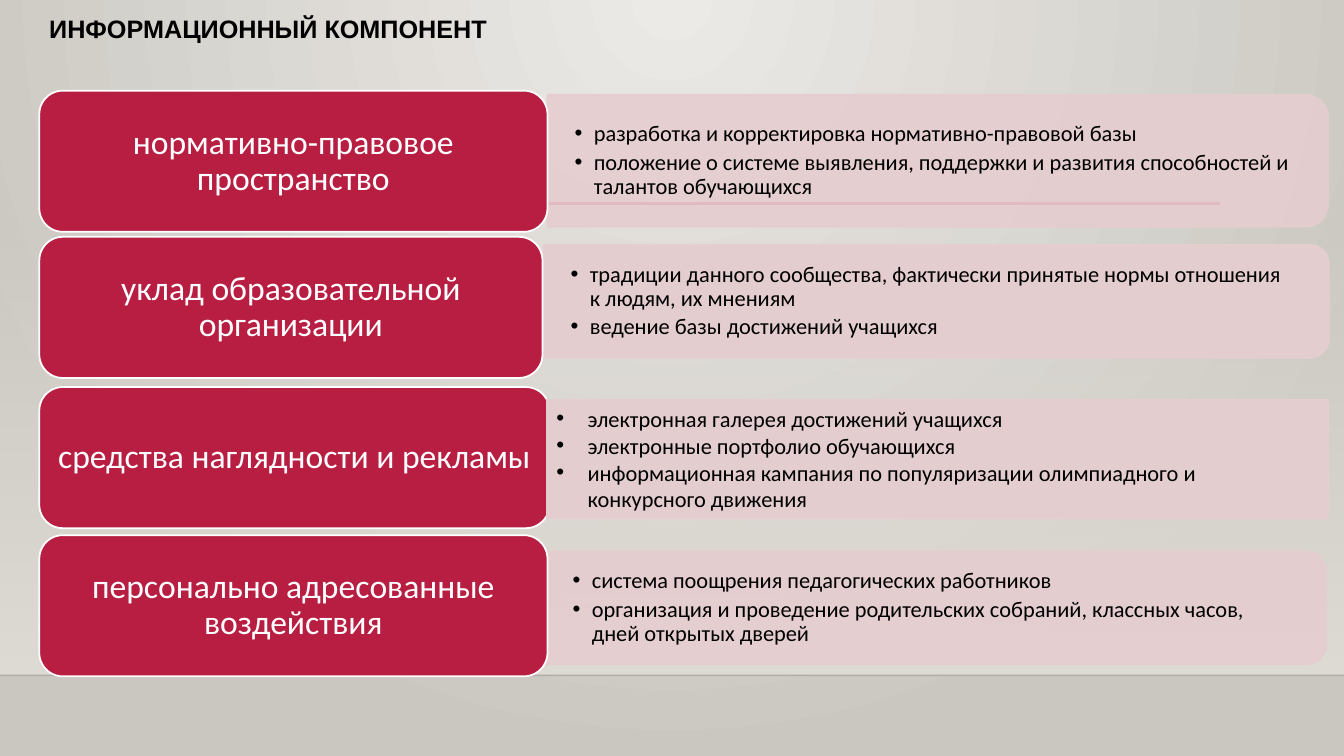
from dataclasses import dataclass
from typing import Any

from lxml import etree
from pptx import Presentation
from pptx.dml.color import RGBColor
from pptx.enum.shapes import MSO_CONNECTOR, MSO_SHAPE
from pptx.enum.text import MSO_ANCHOR, PP_ALIGN
from pptx.oxml.ns import qn
from pptx.util import Inches, Pt

RECTANGLE = MSO_SHAPE.RECTANGLE
ROUNDED = MSO_SHAPE.ROUNDED_RECTANGLE
ROUNDED_TOP = MSO_SHAPE.ROUND_2_SAME_RECTANGLE
STRAIGHT = MSO_CONNECTOR.STRAIGHT
MIDDLE = MSO_ANCHOR.MIDDLE
TOP = MSO_ANCHOR.TOP
LEFT = PP_ALIGN.LEFT
CENTER = PP_ALIGN.CENTER

BLACK = RGBColor(0x00, 0x00, 0x00)
WHITE = RGBColor(0xFF, 0xFF, 0xFF)
CRIMSON = RGBColor(0xB7, 0x1E, 0x42)
PINK = RGBColor(0xE6, 0xCD, 0xCF)
SOLID_PINK = RGBColor(0xE4, 0xCD, 0xCF)
LIGHT_GREY = RGBColor(0xEC, 0xEA, 0xE7)
DARK_GREY = RGBColor(0xCA, 0xC7, 0xC1)
WALL_GREY = RGBColor(0xDF, 0xDB, 0xD5)

SLIDE_WIDTH = 13.33
FLOOR = 6.7
LABEL_LEFT = 0.39
LABEL_HEIGHT = 1.4


@dataclass(frozen=True)
class Area:
    left: float
    top: float
    width: float
    height: float

    def lengths(self) -> list[int]:
        return [Inches(v) for v in (self.left, self.top, self.width, self.height)]


@dataclass(frozen=True)
class TextStyle:
    size: int
    color: RGBColor
    name: str = "Calibri"
    bold: bool = False
    align: Any = LEFT
    line_spacing: float = 0.9
    space_after: float = 0
    indent: float = 0


@dataclass(frozen=True)
class Component:
    label: str
    label_top: float
    label_width: float
    panel: Area
    points: tuple[str, ...]
    fill: RGBColor = PINK
    opacity: int = 90
    rounded: bool = True


TITLE = TextStyle(18, BLACK, name="Arial", bold=True)
LABEL = TextStyle(24, WHITE, align=CENTER)
POINT = TextStyle(16, BLACK, space_after=3, indent=0.19)
PLAIN_POINT = TextStyle(16, BLACK, line_spacing=1, indent=0.31)

COMPONENTS = (
    Component("нормативно-правовое пространство", 0.9, 5.04, Area(5.43, 0.94, 7.74, 1.31), (
        "разработка и корректировка нормативно-правовой базы",
        "положение о системе выявления, поддержки и развития способностей и талантов обучающихся",
    )),
    Component("уклад образовательной организации", 2.35, 4.99, Area(5.39, 2.43, 7.79, 1.12), (
        "традиции данного сообщества, фактически принятые нормы отношения к людям, их мнениям",
        "ведение базы достижений учащихся",
    ), fill=SOLID_PINK, opacity=100),
    Component("средства наглядности и рекламы", 3.84, 5.06, Area(5.42, 3.96, 7.76, 1.18), (
        "электронная галерея достижений учащихся",
        "электронные портфолио обучающихся",
        "информационная кампания по популяризации олимпиадного и конкурсного движения",
    ), fill=SOLID_PINK, opacity=100, rounded=False),
    Component("персонально адресованные воздействия", 5.31, 5.04, Area(5.41, 5.47, 7.74, 1.12), (
        "система поощрения педагогических работников",
        "организация и проведение родительских собраний, классных часов, дней открытых дверей",
    )),
)


def set_opacity(parent: Any, percent: int) -> None:
    color = next(parent.iter(qn("a:srgbClr")))
    etree.SubElement(color, qn("a:alpha"), val=str(percent * 1000))


def set_gradient(fill: Any, start: RGBColor, end: RGBColor) -> None:
    fill.gradient()
    for stop, color, position in zip(fill.gradient_stops, (start, end), (0, 1)):
        stop.color.rgb = color
        stop.position = position


def add_background(page: Any) -> None:
    set_gradient(page.background.fill, LIGHT_GREY, DARK_GREY)
    gradient = next(page.element.iter(qn("a:gradFill")))
    gradient.remove(gradient.find(qn("a:lin")))
    circle = etree.SubElement(gradient, qn("a:path"), {"path": "circle"})
    etree.SubElement(circle, qn("a:fillToRect"), l="43000", t="0", r="43000", b="100000")
    wall = page.shapes.add_shape(RECTANGLE, *Area(0, 2.21, SLIDE_WIDTH, FLOOR - 2.21).lengths())
    wall.shadow.inherit = False
    wall.line.fill.background()
    set_gradient(wall.fill, WALL_GREY, WALL_GREY)
    wall.fill.gradient_angle = 270
    set_opacity(wall.element.spPr, 0)


def add_rule(page: Any, start: float, end: float, height: float,
             color: RGBColor, weight: float, opacity: int) -> None:
    rule = page.shapes.add_connector(
        STRAIGHT, Inches(start), Inches(height), Inches(end), Inches(height))
    rule.line.color.rgb = color
    rule.line.width = Pt(weight)
    set_opacity(rule.element.spPr, opacity)
    etree.SubElement(rule.element.spPr, qn("a:effectLst"))


def add_box(page: Any, preset: Any, area: Area, fill: RGBColor, line: RGBColor,
            weight: float = 1.25, opacity: int = 100) -> Any:
    box = page.shapes.add_shape(preset, *area.lengths())
    box.shadow.inherit = False
    box.fill.solid()
    box.fill.fore_color.rgb = fill
    box.line.color.rgb = line
    box.line.width = Pt(weight)
    if opacity < 100:
        set_opacity(box.element.spPr.find(qn("a:solidFill")), opacity)
        set_opacity(box.element.spPr.find(qn("a:ln")), opacity)
    return box


def write(box: Any, texts: tuple[str, ...], style: TextStyle, anchor: Any = MIDDLE,
          side: float = 0.1, edge: float = 0.05) -> None:
    frame = box.text_frame
    frame_format = {
        "word_wrap": True, "vertical_anchor": anchor,
        "margin_left": Inches(side), "margin_right": Inches(side),
        "margin_top": Inches(edge), "margin_bottom": Inches(edge),
    }
    for key, value in frame_format.items():
        setattr(frame, key, value)
    for index, text in enumerate(texts):
        para = frame.add_paragraph() if index else frame.paragraphs[0]
        para.alignment = style.align
        para.line_spacing = style.line_spacing
        para.space_after = Pt(style.space_after)
        if style.indent:
            properties = para._p.get_or_add_pPr()
            properties.set("marL", str(Inches(style.indent)))
            properties.set("indent", str(-Inches(style.indent)))
            etree.SubElement(properties, qn("a:buFont"), typeface="Arial")
            etree.SubElement(properties, qn("a:buChar"), char="•")
        span = para.add_run()
        span.text = text
        for key in ("name", "bold"):
            setattr(span.font, key, getattr(style, key))
        span.font.size = Pt(style.size)
        span.font.color.rgb = style.color


def add_label(page: Any, item: Component) -> None:
    area = Area(LABEL_LEFT, item.label_top, item.label_width, LABEL_HEIGHT)
    write(add_box(page, ROUNDED, area, CRIMSON, WHITE), (item.label,), LABEL)


def add_panel(page: Any, item: Component) -> None:
    area = item.panel
    if not item.rounded:
        box = add_box(page, RECTANGLE, area, item.fill, PINK, weight=0.75)
        write(box, item.points, PLAIN_POINT)
        return
    shift = (area.width - area.height) / 2
    upright = Area(area.left + shift, area.top - shift, area.height, area.width)
    box = add_box(page, ROUNDED_TOP, upright, item.fill, PINK, opacity=item.opacity)
    box.rotation = 90
    inner = Area(area.left, area.top + 0.06, area.width - 0.05, area.height - 0.12)
    write(page.shapes.add_textbox(*inner.lengths()), item.points, POINT, side=0.27, edge=0.14)


def main() -> None:
    deck = Presentation()
    deck.slide_width, deck.slide_height = Inches(SLIDE_WIDTH), Inches(7.5)
    page = deck.slides.add_slide(deck.slide_layouts[6])
    add_background(page)
    add_rule(page, 0, SLIDE_WIDTH, FLOOR, BLACK, 1, 20)
    add_rule(page, 1.59, 12.1, 2.02, CRIMSON, 2.5, 100)
    for item in COMPONENTS:
        steps = (add_panel, add_label) if item.rounded else (add_label, add_panel)
        for step in steps:
            step(page, item)
    title = page.shapes.add_textbox(*Area(LABEL_LEFT, 0.12, 10.5, 1.15).lengths())
    write(title, ("ИНФОРМАЦИОННЫЙ КОМПОНЕНТ",), TITLE, anchor=TOP)
    deck.save("out.pptx")


if __name__ == "__main__":
    main()
